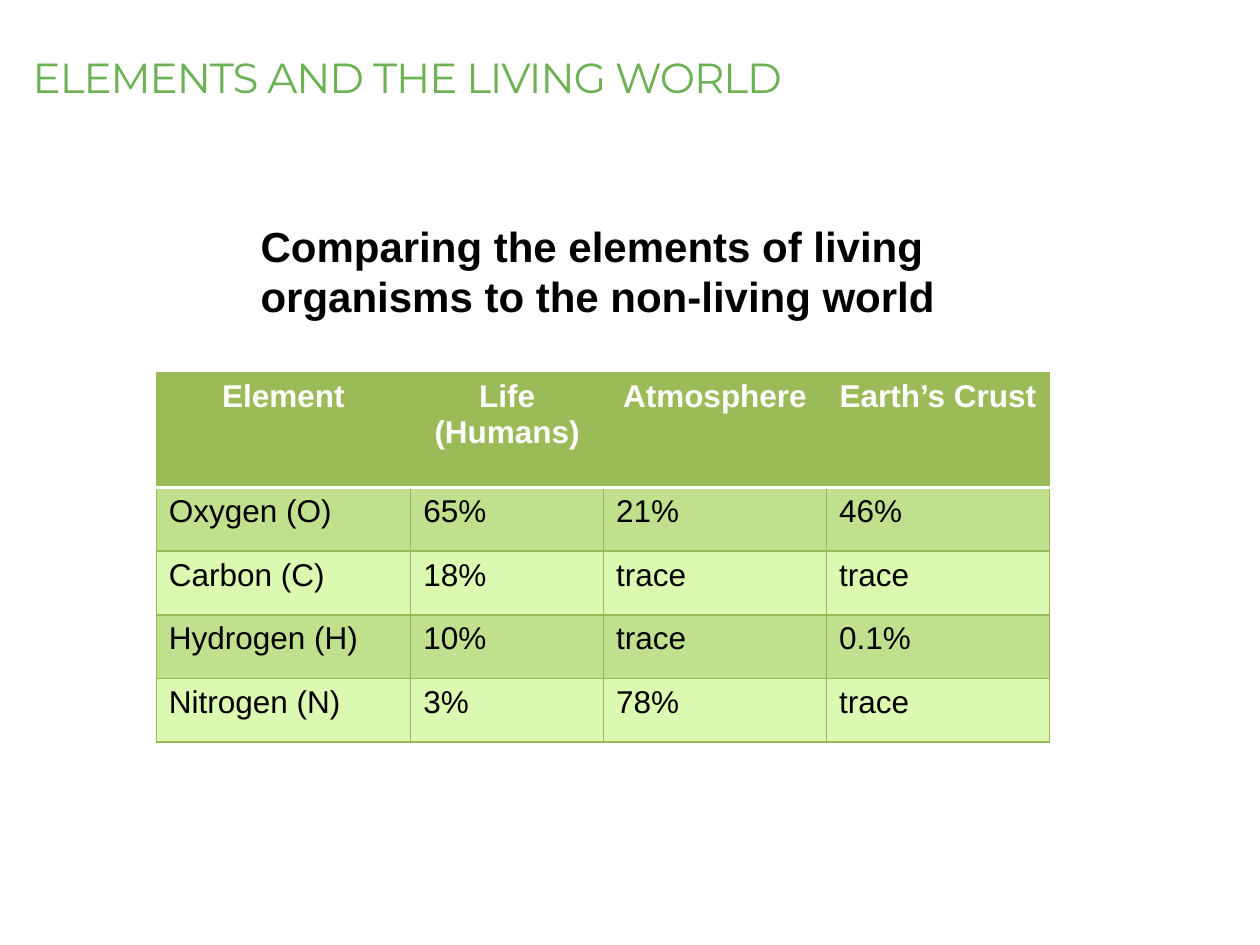
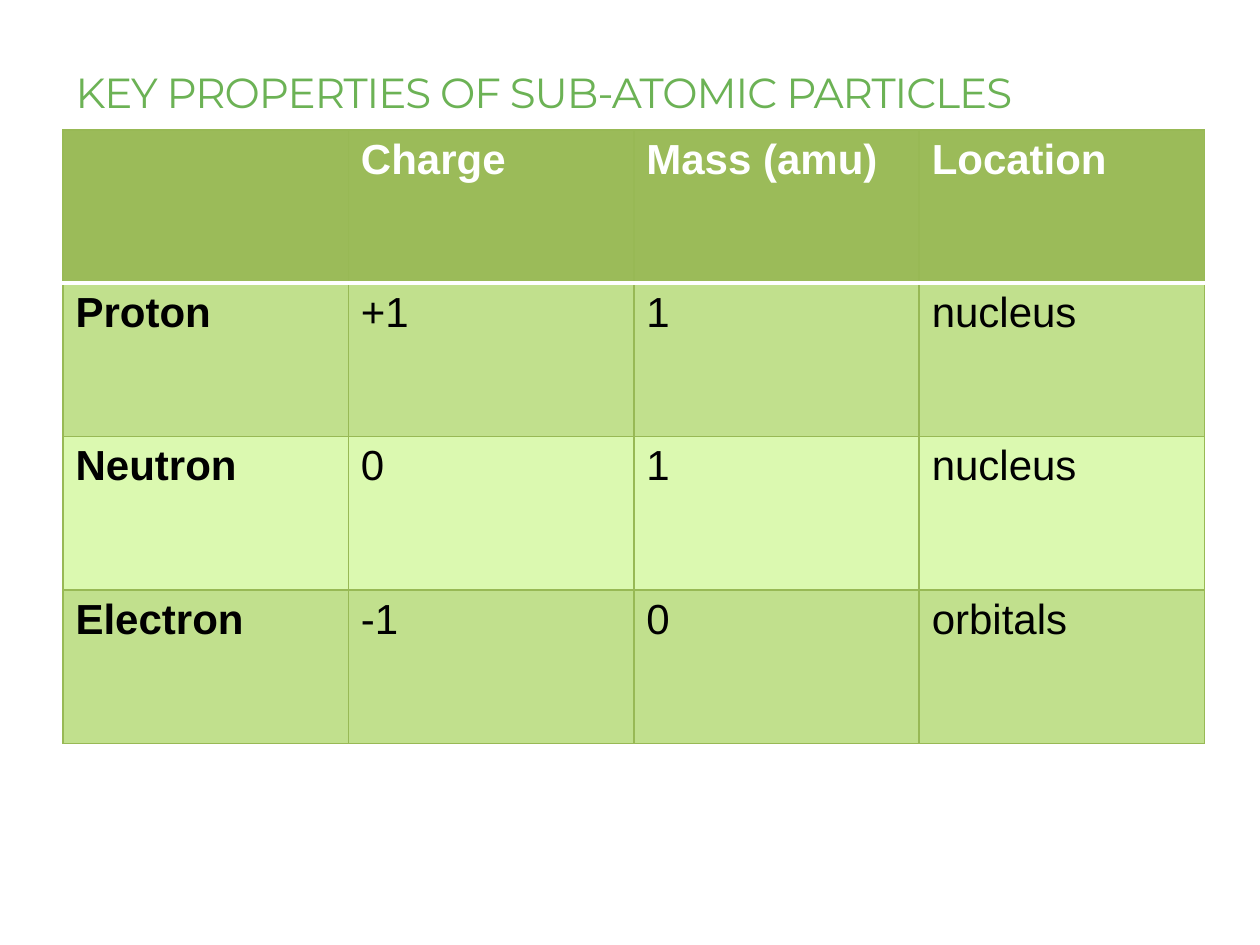
from lxml import etree
from pptx import Presentation
from pptx import util as u
from pptx.dml import color
from pptx.enum import text
from pptx.oxml import ns

GREEN_TITLE = "6CB255"
GREEN_HEADER = "9BBB59"
GREEN_BAND = "C1E08D"
GREEN_PLAIN = "DBF9B0"
GREEN_RULE = "98B955"
WHITE = "FFFFFF"
BLACK = "000000"
TITLE_ONLY = 5


def rgb(code):
    return color.RGBColor.from_string(code)


def add_span(para, words, size, code, bold=False, font="Arial"):
    span = para.add_run()
    span.text = words
    span.font.name = font
    span.font.size = u.Pt(size)
    span.font.bold = bold
    span.font.color.rgb = rgb(code)
    return span


def place(shape, box):
    shape.left, shape.top, shape.width, shape.height = map(u.Inches, box)


# Title shared by both slides
def add_page(deck, words, box):
    page = deck.slides.add_slide(deck.slide_layouts[TITLE_ONLY])
    title = page.shapes.title
    place(title, box)
    frame = title.text_frame
    frame.word_wrap = True
    frame.auto_size = text.MSO_AUTO_SIZE.NONE
    frame.vertical_anchor = text.MSO_ANCHOR.BOTTOM
    para = frame.paragraphs[0]
    para.alignment = text.PP_ALIGN.LEFT
    span = add_span(para, words, 24, GREEN_TITLE, font="Montserrat")
    span.font._element.set("spc", "-60")
    return page


# Bold heading above a table
def add_heading(page, lines, box):
    heading = page.shapes.add_textbox(*map(u.Inches, box))
    frame = heading.text_frame
    frame.word_wrap = True
    for index, line in enumerate(lines):
        para = frame.add_paragraph() if index else frame.paragraphs[0]
        add_span(para, line, 24, BLACK, bold=True)


def add_border(cell, side, code, points):
    properties = cell._tc.get_or_add_tcPr()
    line = etree.SubElement(properties, ns.qn(f"a:ln{side}"), w=str(u.Pt(points)))
    fill = etree.SubElement(line, ns.qn("a:solidFill"))
    etree.SubElement(fill, ns.qn("a:srgbClr"), val=code)


def style_cell(cell, row):
    white_side = {0: "B", 1: "T"}.get(row)
    for side in "LRTB":
        if side == white_side:
            add_border(cell, side, WHITE, 2.25)
        else:
            add_border(cell, side, GREEN_RULE, 1)
    band = GREEN_BAND if row % 2 else GREEN_PLAIN
    cell.fill.solid()
    cell.fill.fore_color.rgb = rgb(band if row else GREEN_HEADER)


# Banded table: the header has its own height, the other rows share the rest
def add_banded_table(page, rows, box, columns, header_height, size,
                     header_align=text.PP_ALIGN.LEFT, bold_labels=False):
    frame = page.shapes.add_table(len(rows), len(columns), *map(u.Inches, box))
    table = frame.table
    for column, width in zip(table.columns, columns):
        column.width = u.Inches(width)
    row_height = (box[3] - header_height) / (len(rows) - 1)
    for r, values in enumerate(rows):
        table.rows[r].height = u.Inches(row_height if r else header_height)
        for c, value in enumerate(values):
            cell = table.cell(r, c)
            style_cell(cell, r)
            para = cell.text_frame.paragraphs[0]
            para.alignment = text.PP_ALIGN.LEFT if r else header_align
            if value:
                bold = r == 0 or (bold_labels and c == 0)
                add_span(para, value, size, BLACK if r else WHITE, bold)
            else:
                para.font.size = u.Pt(size)


def build_elements_page(deck):
    page = add_page(deck, "ELEMENTS AND THE LIVING WORLD", (0.16, 0.14, 8.82, 0.72))
    rows = [
        ("Element", "Life (Humans)", "Atmosphere", "Earth’s Crust"),
        ("Oxygen (O)", "65%", "21%", "46%"),
        ("Carbon (C)", "18%", "trace", "trace"),
        ("Hydrogen (H)", "10%", "trace", "0.1%"),
        ("Nitrogen (N)", "3%", "78%", "trace"),
    ]
    add_banded_table(page, rows, (1.24, 2.96, 7.1, 2.93), (2.02, 1.53, 1.77, 1.77),
                     0.91, 18, header_align=text.PP_ALIGN.CENTER)
    add_heading(page, ("Comparing the elements of living",
                       "organisms to the non-living world"), (1.97, 1.7, 8, 0.91))


def build_particles_page(deck):
    page = add_page(deck, "KEY PROPERTIES OF SUB-ATOMIC PARTICLES",
                    (0.5, 0.26, 8.82, 0.72))
    rows = [
        ("", "Charge", "Mass (amu)", "Location"),
        ("Proton", "+1", "1", "nucleus"),
        ("Neutron", "0", "1", "nucleus"),
        ("Electron", "-1", "0", "orbitals"),
    ]
    box = (0.5, 1.03, 9.06, 4.87)
    columns = [box[2] / 4] * 4
    add_banded_table(page, rows, box, columns, box[3] / len(rows), 24,
                     bold_labels=True)


def main():
    deck = Presentation()
    deck.slide_width, deck.slide_height = u.Inches(10), u.Inches(7.5)
    build_elements_page(deck)
    build_particles_page(deck)
    deck.save("out.pptx")


if __name__ == "__main__":
    main()
